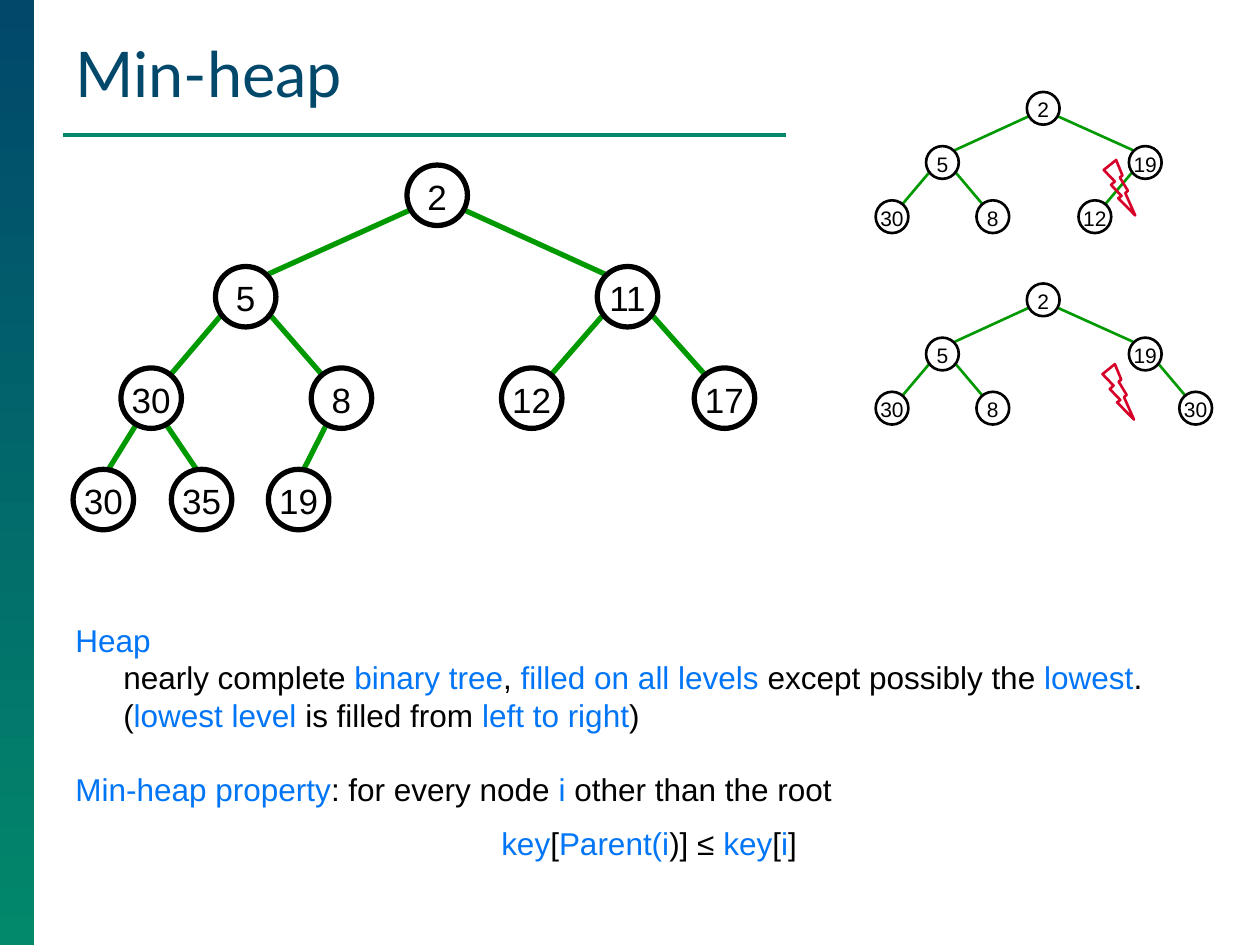
from pptx import Presentation
from pptx import util as u
from pptx.dml.color import RGBColor
from pptx.enum import shapes, text
from pptx.oxml import parse_xml
from pptx.oxml.ns import nsdecls

# ---- Content ----
COLORS = {"navy": "01486B", "teal": "02886B", "blue": "0075F6", "black": "000000",
          "edge": "009900", "violation": "D60029"}
TITLE = "Min-heap"
# Words between asterisks are blue; indent in inches, space before in points
DEFINITION = [
    ("*Heap*", 0, 0),
    ("nearly complete *binary tree*, *filled on all levels* except possibly the *lowest*.\v"
     "(*lowest level* is filled from *left to right*)", 0.38, 0),
    ("*Min-heap property*: for every node *i* other than the root", 0, 21),
    ("*key*[*Parent(i*)] ≤ *key*[*i*]", 3.38, 9.5),
]
# Keys in heap order (children of k are 2k+1 and 2k+2); None is a gap
SMALL = dict(columns=[8.28, 7.48, 9.09, 7.08, 7.88, 8.69, 9.49],
             row=0.43, radius=0.13, size=12, weight=1.5)
TREES = [
    dict(keys=[2, 5, 11, 30, 8, 12, 17, 30, 35, 19],
         columns=[3.47, 1.95, 4.98, 1.2, 2.71, 4.22, 5.75, 0.82, 1.6, 2.37],
         top=1.55, row=0.805, radius=0.24, size=20, weight=3),
    dict(SMALL, keys=[2, 5, 19, 30, 8, 12, None], top=0.86),
    dict(SMALL, keys=[2, 5, 19, 30, 8, None, 30], top=2.38),
]
# Edge ends as shares of the radius, by parent level: parent x, y, child x, y
EDGE_ENDS = [(0.92, 0.5, 0.75, 0.75), (0.75, 0.54, 0.62, 0.75), (0.5, 0.88, 0.17, 1)]
VIOLATIONS = [(8.76, 1.27), (8.75, 2.89)]

prs = Presentation()
prs.slide_width, prs.slide_height = u.Inches(10), u.Inches(7.5)
slide = prs.slides.add_slide(prs.slide_layouts[6])


def rgb(name):
    return RGBColor.from_string(COLORS[name])


def write(paragraph, content, size, font="Arial", color="black", align=None,
          indent=0, before=0, pitch=None):
    if indent:
        paragraph._p.get_or_add_pPr().set("marL", str(u.Inches(indent)))
    paragraph.alignment = align
    paragraph.space_before = u.Pt(before)
    if pitch:
        paragraph.line_spacing = u.Pt(pitch)
    for index, part in enumerate(content.split("*")):
        for n, line in enumerate(part.split("\v")):
            if n:
                paragraph.add_line_break()
            if line:
                run = paragraph.add_run()
                run.text = line
                run.font.size, run.font.name = u.Pt(size), font
                run.font.color.rgb = rgb("blue" if index % 2 else color)


def add_frame(left, top, width, height):
    frame = slide.shapes.add_textbox(*map(u.Inches, (left, top, width, height))).text_frame
    frame.word_wrap = True
    return frame


def add_line(parent, start, end, color, weight):
    line = parent.add_connector(shapes.MSO_CONNECTOR.STRAIGHT, *map(u.Inches, start + end))
    line.line.color.rgb, line.line.width = rgb(color), u.Pt(weight)
    line._element.spPr.append(parse_xml(f"<a:effectLst {nsdecls('a')}/>"))


def add_outline(parent, kind, box, color, weight):
    shape = parent.add_shape(kind, *map(u.Inches, box))
    shape.shadow.inherit = False
    shape.fill.background()
    shape.line.color.rgb, shape.line.width = rgb(color), u.Pt(weight)
    return shape


def draw_tree(keys, columns, top, row, radius, size, weight):
    group = slide.shapes.add_group_shape().shapes
    level = [(k + 1).bit_length() - 1 for k in range(len(keys))]
    centers = [(x, top + row * depth) for x, depth in zip(columns, level)]
    present = [k for k, key in enumerate(keys) if key is not None]
    # Edges lie behind the nodes
    for k in present[1:]:
        above = (k - 1) // 2
        side = -1 if k % 2 else 1
        (px, py), (cx, cy) = centers[above], centers[k]
        out_x, out_y, in_x, in_y = (radius * share for share in EDGE_ENDS[level[above]])
        add_line(group, (px + side * out_x, py + out_y), (cx - side * in_x, cy - in_y),
                 "edge", weight)
    for k in present:
        x, y = centers[k]
        node = add_outline(group, shapes.MSO_SHAPE.OVAL,
                           (x - radius, y - radius, 2 * radius, 2 * radius), "black", weight)
        frame = node.text_frame
        frame.margin_left = frame.margin_right = frame.margin_bottom = 0
        frame.margin_top = u.Inches(0.02)
        frame.word_wrap = False
        frame.vertical_anchor = text.MSO_ANCHOR.MIDDLE
        write(frame.paragraphs[0], str(keys[k]), size, align=text.PP_ALIGN.CENTER)


# ---- Side band and title ----
band = slide.shapes.add_shape(shapes.MSO_SHAPE.RECTANGLE, 0, 0, u.Inches(0.27), prs.slide_height)
band.shadow.inherit = False
band.line.fill.background()
band.fill.gradient()
band.fill.gradient_angle = 270
for stop, name, position in zip(band.fill.gradient_stops, ("navy", "teal"), (0, 1)):
    stop.color.rgb, stop.position = rgb(name), position
add_line(slide.shapes, (0.5, 1.07), (6.24, 1.07), "teal", 2.25)
heading = add_frame(0.5, 0.21, 9.28, 0.71)
heading.vertical_anchor = text.MSO_ANCHOR.BOTTOM
write(heading.paragraphs[0], TITLE, 36, font="Lato", color="navy")

# ---- Definition ----
definition = add_frame(0.5, 4.88, 8.92, 2.22)
for n, (content, indent, before) in enumerate(DEFINITION):
    paragraph = definition.add_paragraph() if n else definition.paragraphs[0]
    write(paragraph, content, 18, indent=indent, before=before, pitch=21.4)

# ---- Trees and violations ----
for tree in TREES:
    draw_tree(**tree)
for left, top in VIOLATIONS:
    add_outline(slide.shapes, shapes.MSO_SHAPE.LIGHTNING_BOLT, (left, top, 0.25, 0.44),
                "violation", 1.5)

prs.save("out.pptx")
